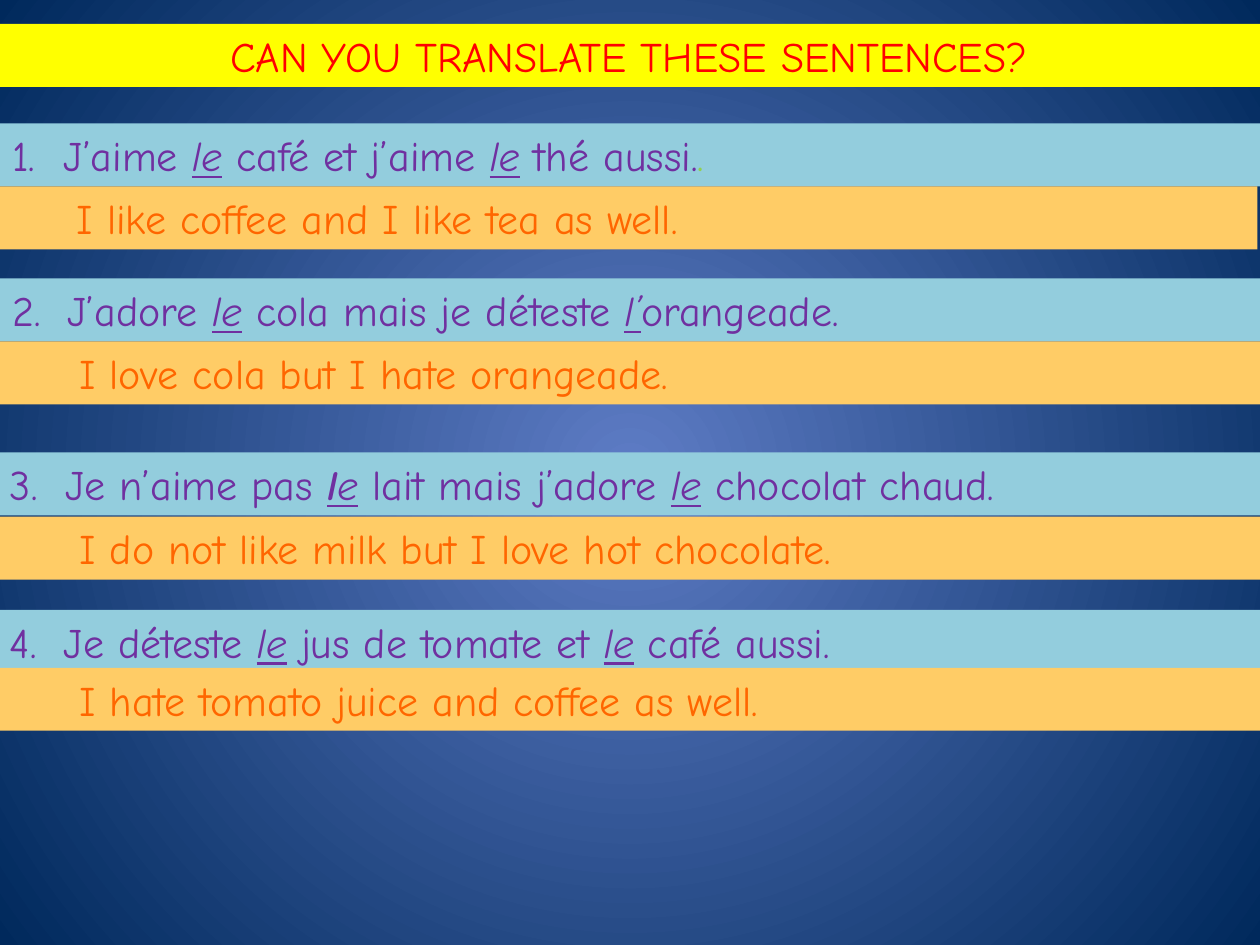
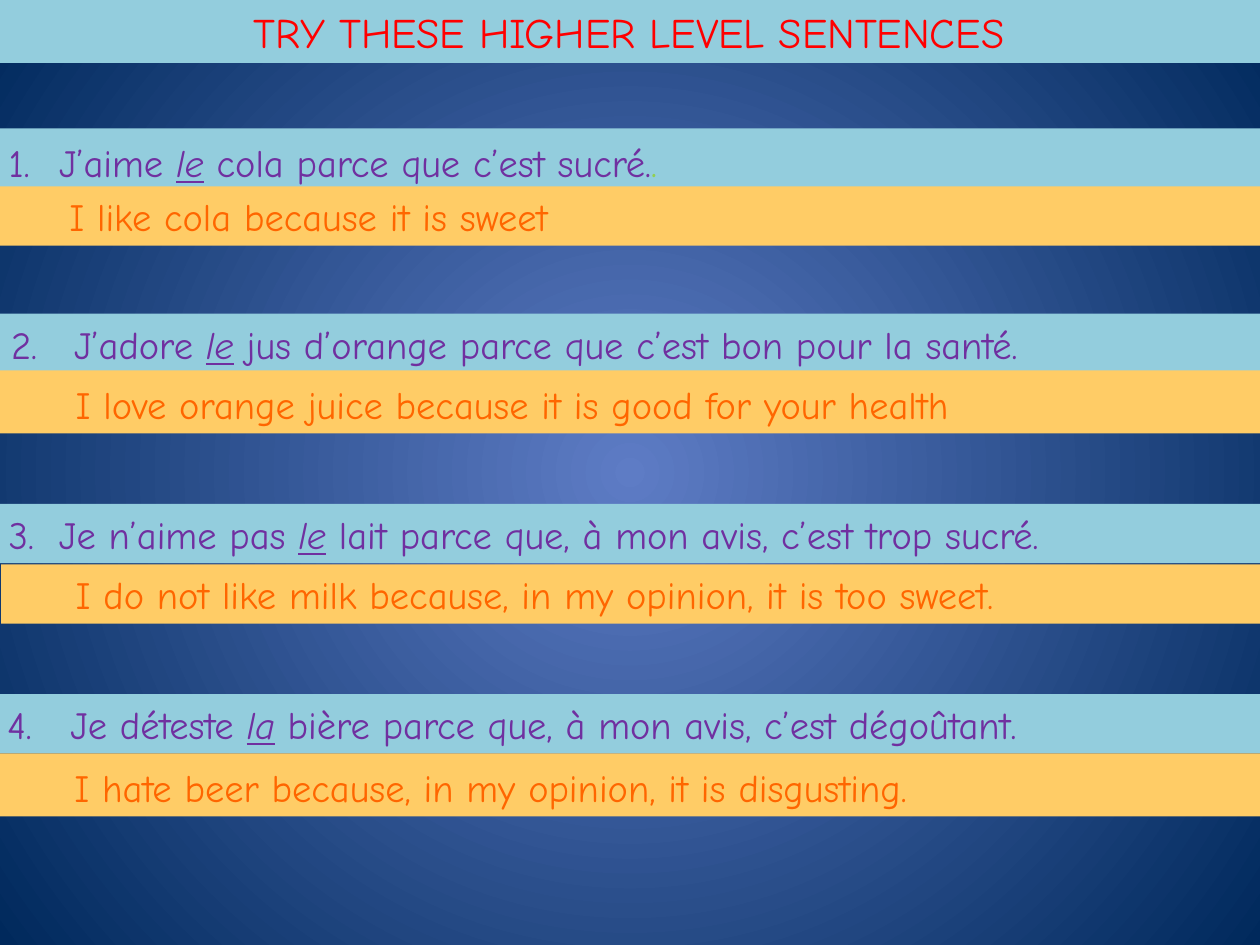
import pptx
import pptx.dml.color
import pptx.enum.text
import pptx.oxml
import pptx.oxml.ns
import pptx.util

Inches, Pt = pptx.util.Inches, pptx.util.Pt
Rgb = pptx.dml.color.RGBColor.from_string
Anchor = pptx.enum.text.MSO_ANCHOR
qn = pptx.oxml.ns.qn

# Theme: colours, font and type sizes
theme = {
    "font": "Comic Neue",
    "glow": "5E7CC5", "night": "00295C",
    "yellow": "FFFF00", "blue": "93CDDD", "orange": "FFCC66",
    "title": "FF0000", "french": "7030A0", "english": "FF6600",
    "dot": "92D050",
    "large": 24, "small": 22,
}

# Slides: each pair is a French band and its English band.
# French: left, top, width, height, hang, text; English: the same with its lead.
# _le_ is italic and underlined, * makes it bold, ~ starts the green end.
slides = [
    {
        "title": "CAN YOU TRANSLATE THESE SENTENCES?",
        "band": "yellow", "top": 0.19, "size": "large",
        "pairs": [
            ((0, 0.98, 10, 0.5, 0.41, "J’aime _le_ café et j’aime _le_ thé aussi.~."),
             (-0.02, 1.48, 10, 0.5, 0.53, "I like coffee and I like tea as well.")),
            ((0, 2.21, 10, 0.5, 0.44, "J’adore _le_ cola mais je déteste _l’_orangeade."),
             (0, 2.71, 10, 0.5, 0.53, "I love cola but I hate orangeade.")),
            ((-0.02, 3.59, 10.05, 0.5, 0.44,
              "Je n’aime pas _*l__e_ lait mais j’adore _le_ chocolat chaud."),
             (0, 4.1, 10, 0.5, 0.53, "I do not like milk but I love hot chocolate.")),
            ((-0.02, 4.84, 10.04, 0.5, 0.43,
              "Je déteste _le_ jus de tomate et _le_ café aussi."),
             (0, 5.3, 10, 0.5, 0.53, "I hate tomato juice and coffee as well.")),
        ],
    },
    {
        "title": "TRY THESE HIGHER LEVEL SENTENCES",
        "band": "blue", "top": 0, "size": "small",
        "pairs": [
            ((-0.03, 1.02, 10.05, 0.5, 0.4, "J’aime _le_ cola parce que c’est sucré.~."),
             (-0.04, 1.48, 10.06, 0.47, 0.49, "I like cola because it is sweet")),
            ((-0.01, 2.49, 10.03, 0.47, 0.5,
              "J’adore _le_ jus d’orange parce que c’est bon pour la santé."),
             (-0.03, 2.94, 10.05, 0.5, 0.53,
              "I love orange juice because it is good for your health")),
            ((-0.03, 4, 10.04, 0.47, 0.4,
              "Je n’aime pas _le_ lait parce que, à mon avis, c’est trop sucré."),
             (0.01, 4.48, 10, 0.47, 0.49,
              "I do not like milk because, in my opinion, it is too sweet.")),
            ((-0.04, 5.51, 10.06, 0.47, 0.5,
              "Je déteste _la_ bière parce que, à mon avis, c’est dégoûtant."),
             (-0.04, 5.98, 10.06, 0.5, 0.53,
              "I hate beer because, in my opinion, it is disgusting.")),
        ],
    },
]


def style(shape, fill, ink, size):
    """Fill a band and set its type; return its paragraph."""
    shape.fill.solid()
    shape.fill.fore_color.rgb = Rgb(theme[fill])
    shape.text_frame.word_wrap = True
    shape.text_frame.auto_size = pptx.enum.text.MSO_AUTO_SIZE.NONE
    para = shape.text_frame.paragraphs[0]
    para.font.name = theme["font"]
    para.font.size = Pt(theme[size])
    para.font.color.rgb = Rgb(theme[ink])
    return para


def band(slide, left, top, width, height, fill, ink, size):
    """Add a band; return its text frame and paragraph."""
    box = slide.shapes.add_textbox(*map(Inches, (left, top, width, height)))
    para = style(box, fill, ink, size)
    box.text_frame.vertical_anchor = Anchor.BOTTOM
    return box.text_frame, para


prs = pptx.Presentation()
prs.slide_width, prs.slide_height = Inches(10), Inches(7.5)

# Shared background: a glow from the centre, set on the master
back = prs.slide_master.background.fill
back.gradient()
for stop, name, place in zip(back.gradient_stops, ("glow", "night"), (0, 1)):
    stop.color.rgb = Rgb(theme[name])
    stop.position = place
common = prs.slide_master.element.find(qn("p:cSld"))
grad = next(common.iter(qn("a:gradFill")))
grad.remove(grad.find(qn("a:lin")))
glow = pptx.oxml.parse_xml(
    '<a:path xmlns:a="http://schemas.openxmlformats.org/drawingml/2006/main" path="circle">'
    '<a:fillToRect l="50000" t="50000" r="50000" b="50000"/></a:path>')
grad.find(qn("a:gsLst")).addnext(glow)

for page in slides:
    slide = prs.slides.add_slide(prs.slide_layouts[5])

    # Title band
    title = slide.shapes.title
    title.left, title.top = Inches(-0.02), Inches(page["top"])
    title.width, title.height = Inches(10.02), Inches(0.5)
    title.text_frame.text = page["title"]
    para = style(title, page["band"], "title", "large")
    para.alignment = pptx.enum.text.PP_ALIGN.CENTER

    for num, (french, english) in enumerate(page["pairs"], 1):
        # Numbered French sentence
        *place, hang, text = french
        frame, para = band(slide, *place, "blue", "french", page["size"])
        props = para._p.get_or_add_pPr()
        props.set("marL", str(Inches(hang)))
        props.set("indent", str(-Inches(hang)))
        bullet = props.makeelement(
            qn("a:buAutoNum"), {"type": "arabicPeriod", "startAt": str(num)})
        props.insert(0, bullet)
        text, _, end = text.partition("~")
        for spot, part in enumerate(text.split("_")):
            if part:
                run = para.add_run()
                run.text = part.lstrip("*")
                if spot % 2:
                    run.font.italic = run.font.underline = True
                if part.startswith("*"):
                    run.font.bold = True
        if end:
            run = para.add_run()
            run.text = end
            run.font.color.rgb = Rgb(theme["dot"])

        # English answer, set in from the left
        *place, lead, text = english
        frame, para = band(slide, *place, "orange", "english", page["size"])
        frame.margin_left = Inches(0.1 + lead)
        para.add_run().text = text

prs.save("out.pptx")
